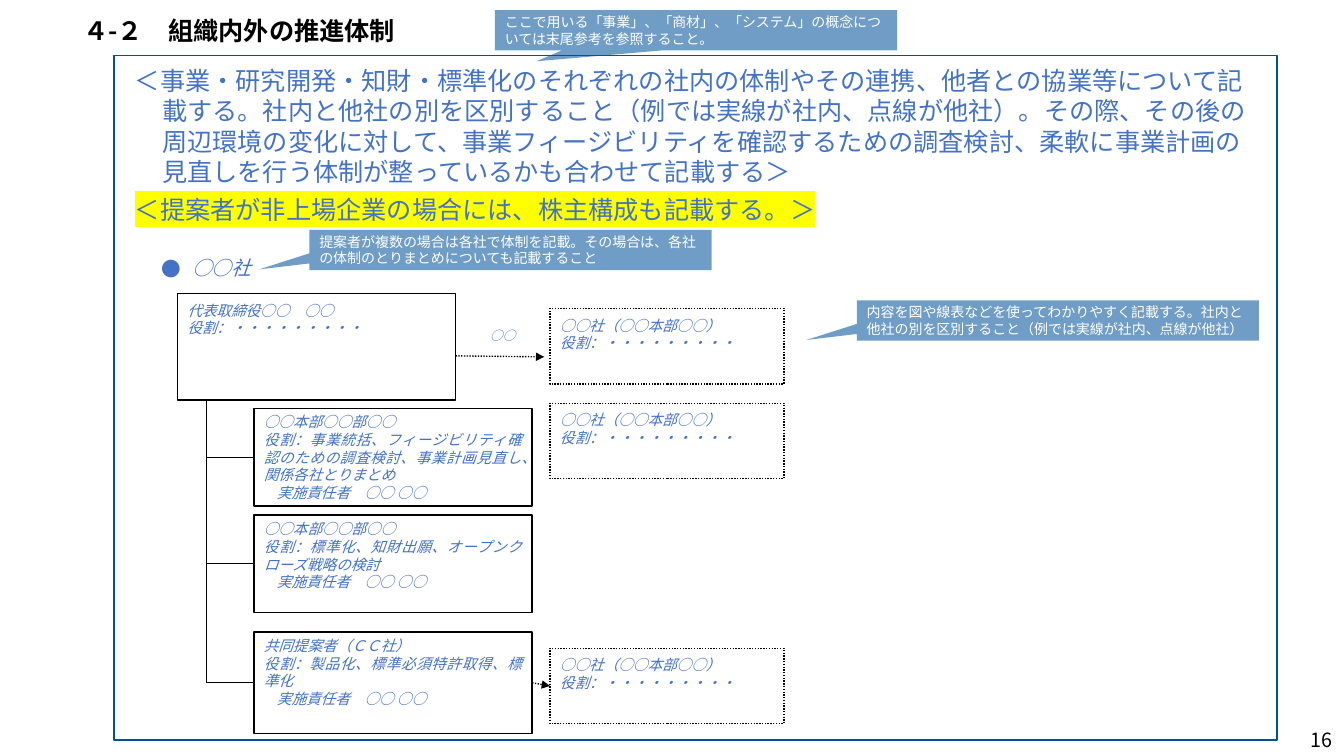
from lxml.etree import SubElement
from pptx import Presentation
from pptx.dml.color import RGBColor
from pptx.enum.dml import MSO_LINE
from pptx.enum.shapes import MSO_CONNECTOR, MSO_SHAPE
from pptx.enum.text import MSO_ANCHOR as ANCHOR, PP_ALIGN as ALIGN
from pptx.oxml.ns import qn
from pptx.util import Pt

CJK = "Noto Sans CJK JP"
BLUE, NAVY, BLACK, WHITE, YELLOW = "4472C4", "005298", "000000", "FFFFFF", "FFFF00"
LEFT, TOP, RIGHT, BOTTOM = 1, 0, 3, 2
PARTNER_LINES = ["○○社（○○本部○○）", "役割：・・・・・・・・・"]
MANAGER = "実施責任者　○○ ○○"


def color(hex_string):
    return RGBColor.from_string(hex_string)


def write(frame, text, first=False, size=10.5, font=CJK, fill=BLUE, bold=False,
          italic=False, align=ALIGN.LEFT, before=0, margin=0, indent=0,
          highlight=None, bullet=None):
    """Add one formatted paragraph to a text frame."""
    para = frame.paragraphs[0] if first else frame.add_paragraph()
    para.alignment = align
    para.space_before = Pt(before)
    para.line_spacing = Pt(size * 1.2)
    props = para._p.get_or_add_pPr()
    props.set("marL", str(Pt(margin)))
    props.set("indent", str(Pt(indent)))
    if bullet:
        SubElement(props, qn("a:buFont")).set("typeface", CJK)
        SubElement(props, qn("a:buChar")).set("char", bullet)
    span = para.add_run()
    span.text = text
    span.font.size = Pt(size)
    span.font.bold = bold
    span.font.italic = italic
    span.font.color.rgb = color(fill)
    if highlight:
        mark = SubElement(span._r.get_or_add_rPr(), qn("a:highlight"))
        SubElement(mark, qn("a:srgbClr")).set("val", highlight)
    span.font.name = font
    SubElement(span._r.get_or_add_rPr(), qn("a:ea")).set("typeface", CJK)


def set_frame(shape, anchor=ANCHOR.TOP, top=3.6):
    frame = shape.text_frame
    frame.word_wrap = True
    frame.vertical_anchor = anchor
    frame.margin_left = frame.margin_right = Pt(7.2)
    frame.margin_top, frame.margin_bottom = Pt(top), Pt(3.6)
    return frame


def add_text(page, box, texts, anchor=ANCHOR.TOP, **style):
    """Add a text box; each text is a string or a (string, extra style) pair."""
    frame = set_frame(page.shapes.add_textbox(*map(Pt, box)), anchor)
    for number, item in enumerate(texts):
        text, extra = item if isinstance(item, tuple) else (item, {})
        write(frame, text, first=number == 0, **{**style, **extra})


def add_box(page, box, lines=(), fill=None, line=BLACK, dotted=False, top=3.6,
            last_indent=0):
    shape = page.shapes.add_shape(MSO_SHAPE.RECTANGLE, *map(Pt, box))
    shape.shadow.inherit = False
    if fill:
        shape.fill.solid()
        shape.fill.fore_color.rgb = color(fill)
    else:
        shape.fill.background()
    shape.line.color.rgb = color(line)
    shape.line.width = Pt(1)
    if dotted:
        shape.line.dash_style = MSO_LINE.ROUND_DOT
    frame = set_frame(shape, top=top)
    for number, text in enumerate(lines):
        indent = last_indent if number == len(lines) - 1 else 0
        write(frame, text, first=number == 0, italic=True, align=ALIGN.JUSTIFY,
              indent=indent)
    return shape


def add_callout(page, left, top, text, tip=(-0.625, 0.481)):
    shape = page.shapes.add_shape(MSO_SHAPE.RECTANGULAR_CALLOUT,
                                  *map(Pt, (left, top, 287.3, 28.8)))
    shape.shadow.inherit = False
    shape.adjustments[0], shape.adjustments[1] = tip
    shape.fill.solid()
    shape.fill.fore_color.rgb = color(NAVY)
    tint = shape.fill._xPr.find(qn("a:solidFill")).find(qn("a:srgbClr"))
    SubElement(tint, qn("a:alpha")).set("val", "56000")
    shape.line.fill.background()
    write(set_frame(shape, ANCHOR.MIDDLE), text, first=True, size=10,
          font="Arial", fill=WHITE)


def add_line(page, start, end, begin=None, finish=None, arrow=False):
    """Draw a line; begin and finish are (shape, side) pairs to join."""
    link = page.shapes.add_connector(MSO_CONNECTOR.STRAIGHT, *map(Pt, start + end))
    link.line.color.rgb = color(BLACK)
    link.line.width = Pt(1 if arrow else 0.75)
    if arrow:
        link.line.dash_style = MSO_LINE.ROUND_DOT
        SubElement(link.line._get_or_add_ln(), qn("a:tailEnd")).set("type", "triangle")
    SubElement(link._element.spPr, qn("a:effectLst"))
    if begin:
        link.begin_connect(*begin)
    if finish:
        link.end_connect(*finish)


def add_heading(page, box):
    left, top, width, height = box
    add_text(page, box, ["４-２　組織内外の推進体制"], ANCHOR.MIDDLE, size=18,
             fill=BLACK, bold=True)
    add_callout(page, left + 301, top - 0.7,
                "ここで用いる「事業」、「商材」、「システム」の概念については"
                "末尾参考を参照すること。", (-0.397, 0.771))


def add_guidance(page, box):
    add_text(page, box, [
        "＜事業・研究開発・知財・標準化のそれぞれの社内の体制やその連携、他者との協業等に"
        "ついて記載する。社内と他社の別を区別すること（例では実線が社内、点線が他社）。"
        "その際、その後の周辺環境の変化に対して、事業フィージビリティを確認するための"
        "調査検討、柔軟に事業計画の見直しを行う体制が整っているかも合わせて記載する＞",
        ("＜提案者が非上場企業の場合には、株主構成も記載する。＞", {"highlight": YELLOW}),
    ], size=18, before=6, margin=76.3, indent=-19.4)


def add_organisation(page, box):
    """Place the company name, its units, the partners and their links."""
    left, top, width, height = box
    add_text(page, (left - 18.7, top - 30.2, 103, 24.5), ["○○社"], size=14,
             italic=True, align=ALIGN.JUSTIFY, margin=22.3, indent=-22.3, bullet="●")
    add_callout(page, left + 94.3, top - 45.3,
                "提案者が複数の場合は各社で体制を記載。その場合は、各社の体制の"
                "とりまとめについても記載すること")
    add_callout(page, left + 485.3, top + 5.1,
                "内容を図や線表などを使ってわかりやすく記載する。社内と他社の別を"
                "区別すること（例では実線が社内、点線が他社）")

    box_width = 198.7
    add_box(page, (left, top, box_width, 76.3),
            ["代表取締役○○　○○", "役割：・・・・・・・・・"], top=5.76)

    trunk = left + 20.9
    for offset, unit_height, name, role in (
            (82.1, 69.8, "○○本部○○部○○",
             "役割：事業統括、フィージビリティ確認のための調査検討、事業計画見直し、"
             "関係各社とりまとめ"),
            (158.4, 69.8, "○○本部○○部○○",
             "役割：標準化、知財出願、オープンクローズ戦略の検討"),
            (241.9, 72.7, "共同提案者（ＣＣ社）",
             "役割：製品化、標準必須特許取得、標準化")):
        unit = add_box(page, (left + 54.7, top + offset, box_width, unit_height),
                       [name, role, MANAGER], fill=WHITE, last_indent=9.4)
        middle = top + offset + unit_height / 2
        add_line(page, (trunk, middle), (left + 54.7, middle), finish=(unit, LEFT))
    add_line(page, (trunk, top + 76.3), (trunk, middle))

    for offset in (10.8, 78.5, 253.5):
        partner = add_box(page, (left + 266.2, top + offset, 167, 54), PARTNER_LINES,
                          dotted=True, top=5.76)
    add_line(page, (left + box_width, top + 44.7), (left + 262.1, top + 45.4), arrow=True)
    add_line(page, (left + 253.4, middle), (left + 266.2, middle),
             (unit, RIGHT), (partner, LEFT), arrow=True)
    add_text(page, (left + 199.5, top + 19.5, 65.5, 21.6), ["○○"], ANCHOR.MIDDLE,
             size=9, italic=True, align=ALIGN.CENTER)


def main():
    deck = Presentation()
    deck.slide_width, deck.slide_height = Pt(960), Pt(540)
    page = deck.slides.add_slide(deck.slide_layouts[6])
    add_box(page, (81.4, 39.6, 830.9, 488.9), line=NAVY)
    add_guidance(page, (32.4, 43.2, 879.1, 122.4))
    add_organisation(page, (126.7, 209.5, 433, 315))
    add_heading(page, (52.5, 7.9, 828, 27.4))
    add_text(page, (897.8, 517.7, 61.2, 20.9), ["16"], ANCHOR.MIDDLE, size=14,
             fill=BLACK, align=ALIGN.RIGHT)
    deck.save("out.pptx")


if __name__ == "__main__":
    main()
